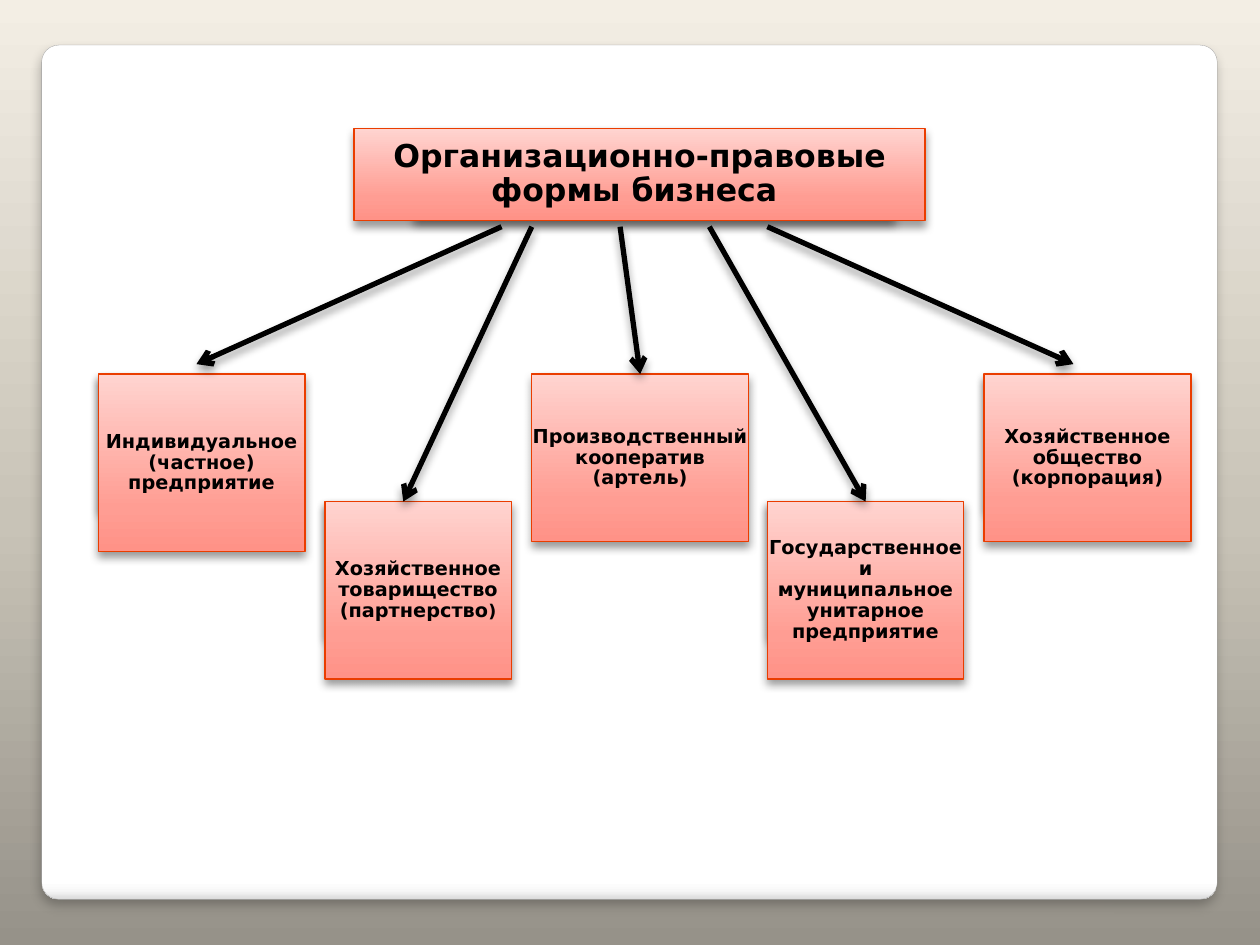
from lxml import etree
from pptx import Presentation
from pptx.dml.color import RGBColor
from pptx.enum.shapes import MSO_CONNECTOR, MSO_SHAPE
from pptx.enum.text import MSO_ANCHOR, PP_ALIGN
from pptx.oxml.ns import qn
from pptx.util import Cm, Pt

RECT = MSO_SHAPE.RECTANGLE
ROUND = MSO_SHAPE.ROUNDED_RECTANGLE
STRAIGHT = MSO_CONNECTOR.STRAIGHT
MIDDLE = MSO_ANCHOR.MIDDLE
CENTER = PP_ALIGN.CENTER

FONT = "DejaVu Sans"
BLACK = RGBColor(0x00, 0x00, 0x00)
ORANGE = RGBColor(0xEA, 0x3D, 0x00)
GREY = RGBColor(0xA4, 0xA4, 0xA4)
WHITE = RGBColor(0xFF, 0xFF, 0xFF)
MIST = RGBColor(0xF7, 0xF7, 0xF7)
SILVER = RGBColor(0xDA, 0xDA, 0xDA)
STONE = RGBColor(0x96, 0x92, 0x89)
SAND = RGBColor(0xC8, 0xC3, 0xB7)
CREAM = RGBColor(0xF3, 0xEE, 0xE4)
ASH = RGBColor(0xB4, 0xB4, 0xB4)
PALE = RGBColor(0xF9, 0xF9, 0xF9)
CORAL = RGBColor(0xFF, 0x92, 0x87)
SALMON = RGBColor(0xFF, 0x9D, 0x93)
PINK = RGBColor(0xFF, 0xD4, 0xD0)

# Gradient stops: position in percent, colour
PAGE = [(0, STONE), (45, SAND), (100, CREAM)]
PANEL = [(0, WHITE), (98, WHITE), (99, MIST), (100, SILVER)]
PLATE = [(0, ASH), (60, PALE), (100, WHITE)]
CARD = [(0, CORAL), (25, SALMON), (100, PINK)]
UP, DOWN = 90, 270

HIGH, LOW = 7.54, 10.11  # tops of the two rows of cards
START = 4.57             # where all arrows begin

# Card left, top, width, height; plate left; runs of text and size;
# arrow start x; arrow end, or None for the middle of the card's top
FORMS = [
    (1.98, HIGH, 4.17, 3.58, 1.98,
     [("Индивидуальное (частное) предприятие", 11)], 10.11, (3.96, 7.34)),
    (6.55, LOW, 3.76, 3.58, 6.55,
     [("Хозяйственное товарищество (партнерство", 11), (")", 10)],
     10.72, (8.13, LOW)),
    (15.47, LOW, 3.96, 3.58, 15.47,
     [("Государственное и муниципальное унитарное предприятие", 11)],
     14.3, None),
    (10.72, HIGH, 4.37, 3.38, 10.92,
     [("Производственный кооператив (артель)", 11)], 12.5, None),
    (19.84, HIGH, 4.17, 3.38, 19.84,
     [("Хозяйственное общество (корпорация)", 11)], 15.47, (21.64, 7.34)),
]


def blend(fill, stops, angle):
    """Fill with a linear gradient of any number of stops."""
    fill.gradient()
    fill.gradient_angle = angle
    items = fill._fill._gradFill.find(qn("a:gsLst"))
    for old in list(items):
        items.remove(old)
    for pos, color in stops:
        stop = etree.SubElement(items, qn("a:gs"), pos=str(pos * 1000))
        etree.SubElement(stop, qn("a:srgbClr"), val=str(color))


def shade(props, alpha=40, blur=5.2, dist=3):
    """Give shape properties a black shadow that falls straight down."""
    effects = props.find(qn("a:effectLst"))
    if effects is None:
        effects = etree.SubElement(props, qn("a:effectLst"))
    outer = etree.SubElement(
        effects, qn("a:outerShdw"), blurRad=str(int(Pt(blur))),
        dist=str(int(Pt(dist))), dir="5400000", rotWithShape="0")
    color = etree.SubElement(outer, qn("a:srgbClr"), val=str(BLACK))
    etree.SubElement(color, qn("a:alpha"), val=str(alpha * 1000))


def block(slide, kind, box, stops, angle, edge=None, width=0.75):
    """Add a shape with gradient fill and optional outline."""
    shape = slide.shapes.add_shape(kind, *map(Cm, box))
    blend(shape.fill, stops, angle)
    if edge is None:
        shape.line.fill.background()
    else:
        shape.line.color.rgb = edge
        shape.line.width = Pt(width)
    shape.shadow.inherit = False
    return shape


def write(shape, runs):
    frame = shape.text_frame
    frame.word_wrap = True
    frame.vertical_anchor = MIDDLE
    frame.margin_left = frame.margin_right = Cm(0.02)
    frame.margin_top = frame.margin_bottom = Cm(0.02)
    para = frame.paragraphs[0]
    para.alignment = CENTER
    para.line_spacing = 0.9
    para.space_after = Pt(round(runs[0][1] * 0.35, 1))
    for text, size in runs:
        run = para.add_run()
        run.text = text
        run.font.name = FONT
        run.font.size = Pt(size)
        run.font.bold = True
        run.font.color.rgb = BLACK


def card(slide, box, plate, runs):
    """Add a text card with a grey plate behind it."""
    back = block(slide, RECT, plate, PLATE, UP)
    shade(back._element.spPr)
    front = block(slide, RECT, box, CARD, UP, ORANGE)
    shade(front._element.spPr)
    write(front, runs)
    return front


def arrow(slide, x, end, goal):
    """Draw an arrow to a point, or to the top of the goal card."""
    left, top = end or (0, 0)
    line = slide.shapes.add_connector(
        STRAIGHT, Cm(x), Cm(START), Cm(left), Cm(top))
    if end is None:
        line.end_connect(goal, 0)
    line.line.color.rgb = BLACK
    line.line.width = Pt(3)
    props = line._element.spPr
    etree.SubElement(props.find(qn("a:ln")), qn("a:tailEnd"), type="arrow")
    shade(props)


def main():
    deck = Presentation()
    deck.slide_width, deck.slide_height = Cm(25.4), Cm(19.05)
    slide = deck.slides.add_slide(deck.slide_layouts[6])
    blend(slide.background.fill, PAGE, UP)

    panel = block(slide, ROUND, (0.84, 0.91, 23.7, 17.22),
                  PANEL, DOWN, GREY, 0.16)
    panel.adjustments[0] = 0.02
    shade(panel._element.spPr, 25, 6, 4)

    card(slide, (7.14, 2.59, 11.51, 1.85), (8.33, 2.59, 9.7, 1.85),
         [("Организационно-правовые формы бизнеса ", 18)])
    for left, top, width, height, back, runs, x, end in FORMS:
        goal = card(slide, (left, top, width, height),
                    (back, top, 3.53, 2.74), runs)
        arrow(slide, x, end, goal)

    deck.save("out.pptx")


if __name__ == "__main__":
    main()
